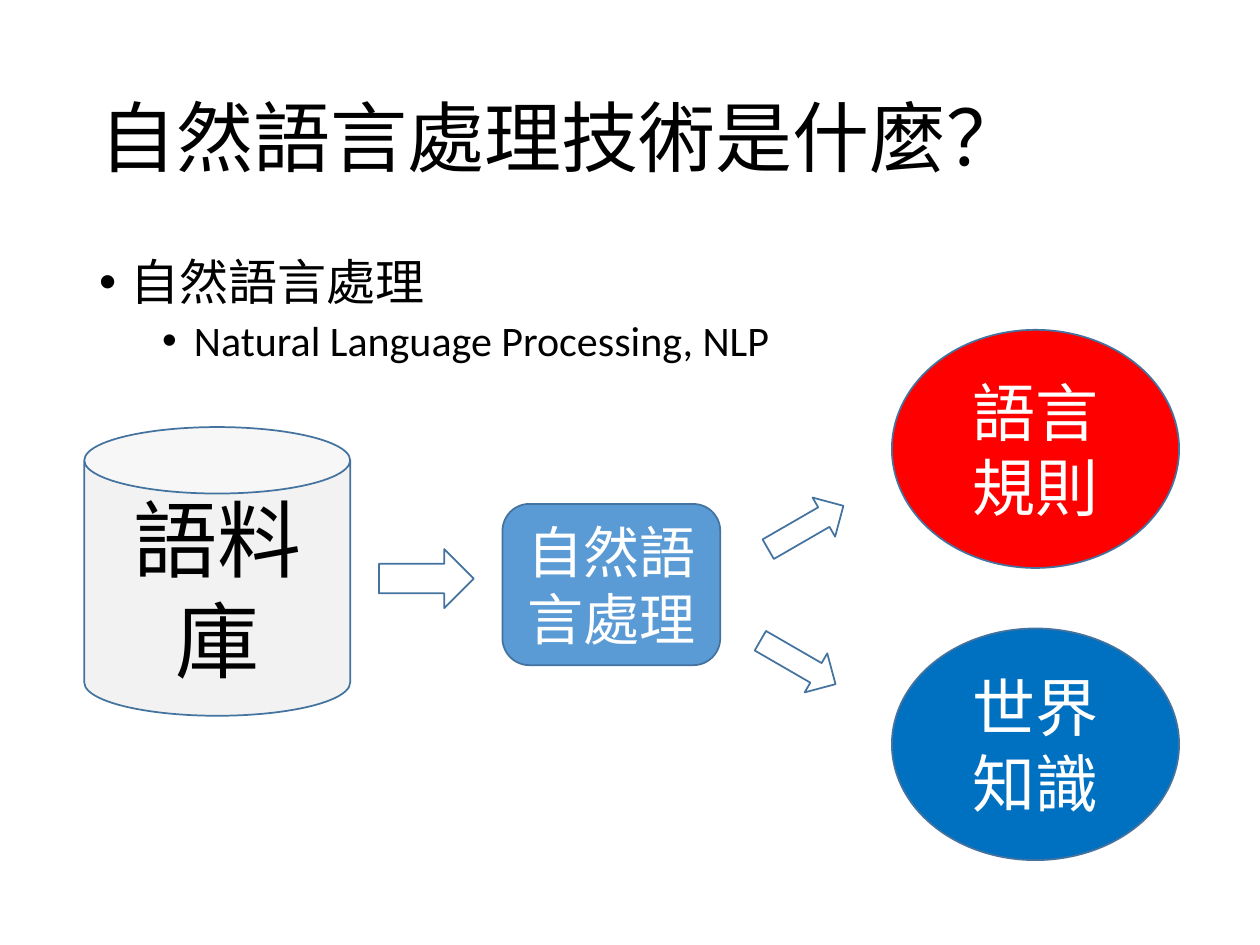
from dataclasses import dataclass

from lxml.etree import SubElement
from pptx import Presentation
from pptx.dml.color import RGBColor
from pptx.enum.shapes import MSO_SHAPE
from pptx.enum.text import MSO_ANCHOR, PP_ALIGN
from pptx.oxml.ns import qn
from pptx.util import Cm, Pt


@dataclass(frozen=True)
class Theme:
    font: str = "Calibri"
    ink: str = "000000"
    paper: str = "FFFFFF"
    outline: str = "43739E"
    corpus: str = "F2F2F2"
    process: str = "5B9BD5"
    rules: str = "FF0000"
    knowledge: str = "0070C0"
    title_size: int = 44
    bullet_size: int = 28
    sub_bullet_size: int = 24
    corpus_size: int = 48
    process_size: int = 32
    result_size: int = 36


@dataclass(frozen=True)
class Box:
    """A region in centimetres."""
    left: float
    top: float
    width: float
    height: float

    def inner(self, left, top, width, height):
        return Box(self.left + left, self.top + top, width, height)

    def lengths(self):
        return Cm(self.left), Cm(self.top), Cm(self.width), Cm(self.height)


THEME = Theme()


def add_run(paragraph, wording, size, color):
    run = paragraph.add_run()
    run.text = wording
    run.font.name = THEME.font
    run.font.size = Pt(size)
    run.font.color.rgb = RGBColor.from_string(color)


def add_text_frame(slide, box, anchor):
    frame = slide.shapes.add_textbox(*box.lengths()).text_frame
    frame.word_wrap = True
    frame.vertical_anchor = anchor
    return frame


def set_bullet(paragraph, level, margin, hanging):
    paragraph.level = level
    properties = paragraph._p.get_or_add_pPr()
    properties.set("marL", str(Cm(margin)))
    properties.set("indent", str(-Cm(hanging)))
    SubElement(properties, qn("a:buFont")).set("typeface", "Arial")
    SubElement(properties, qn("a:buChar")).set("char", "•")


def add_figure(slide, preset, box, fill, rotation=0):
    figure = slide.shapes.add_shape(preset, *box.lengths())
    figure.shadow.inherit = False
    figure.fill.solid()
    figure.fill.fore_color.rgb = RGBColor.from_string(fill)
    figure.line.color.rgb = RGBColor.from_string(THEME.outline)
    figure.line.width = Pt(1)
    figure.rotation = rotation
    return figure


def add_node(slide, preset, box, fill, wording, size, color):
    frame = add_figure(slide, preset, box, fill).text_frame
    frame.word_wrap = True
    frame.vertical_anchor = MSO_ANCHOR.MIDDLE
    paragraph = frame.paragraphs[0]
    paragraph.alignment = PP_ALIGN.CENTER
    add_run(paragraph, wording, size, color)


def draw_title(slide, box):
    paragraph = add_text_frame(slide, box, MSO_ANCHOR.MIDDLE).paragraphs[0]
    paragraph.line_spacing = 0.9
    add_run(paragraph, "自然語言處理技術是什麼？", THEME.title_size, THEME.ink)


def draw_bullets(slide, box):
    frame = add_text_frame(slide, box, MSO_ANCHOR.TOP)
    topic = frame.paragraphs[0]
    english_name = frame.add_paragraph()
    for level, (paragraph, wording, size) in enumerate((
        (topic, "自然語言處理", THEME.bullet_size),
        (english_name, "Natural Language Processing, NLP", THEME.sub_bullet_size),
    )):
        set_bullet(paragraph, level, 0.64 + 1.27 * level, 0.64)
        paragraph.line_spacing = 0.9
        add_run(paragraph, wording, size, THEME.ink)
    english_name.space_before = Pt(5)


def draw_flow(slide, box):
    # Corpus and processing step
    add_node(slide, MSO_SHAPE.CAN, box.inner(0, 1.96, 5.36, 5.82),
             THEME.corpus, "語料庫", THEME.corpus_size, THEME.ink)
    add_node(slide, MSO_SHAPE.ROUNDED_RECTANGLE, box.inner(8.43, 3.51, 4.39, 3.25),
             THEME.process, "自然語言處理", THEME.process_size, THEME.paper)

    # Results
    for top, height, fill, wording in (
        (0, 4.8, THEME.rules, "語言規則"),
        (6.02, 4.67, THEME.knowledge, "世界知識"),
    ):
        add_node(slide, MSO_SHAPE.OVAL, box.inner(16.28, top, 5.79, height),
                 fill, wording, THEME.result_size, THEME.paper)

    # Arrows: into the step, then down and up to the results
    for left, top, width, height, rotation in (
        (5.94, 4.42, 1.91, 1.19, 0),
        (13.51, 6.25, 1.75, 0.91, 30),
        (13.67, 3.53, 1.75, 0.91, 330),
    ):
        add_figure(slide, MSO_SHAPE.RIGHT_ARROW, box.inner(left, top, width, height),
                   THEME.paper, rotation)


def main():
    deck = Presentation()
    deck.slide_width, deck.slide_height = Cm(25.4), Cm(19.05)
    slide = deck.slides.add_slide(deck.slide_layouts[6])
    draw_title(slide, Box(1.75, 1.02, 21.9, 3.68))
    draw_bullets(slide, Box(1.75, 5.08, 21.9, 12.09))
    draw_flow(slide, Box(1.7, 6.65, 22.07, 10.69))
    deck.save("out.pptx")


if __name__ == "__main__":
    main()
